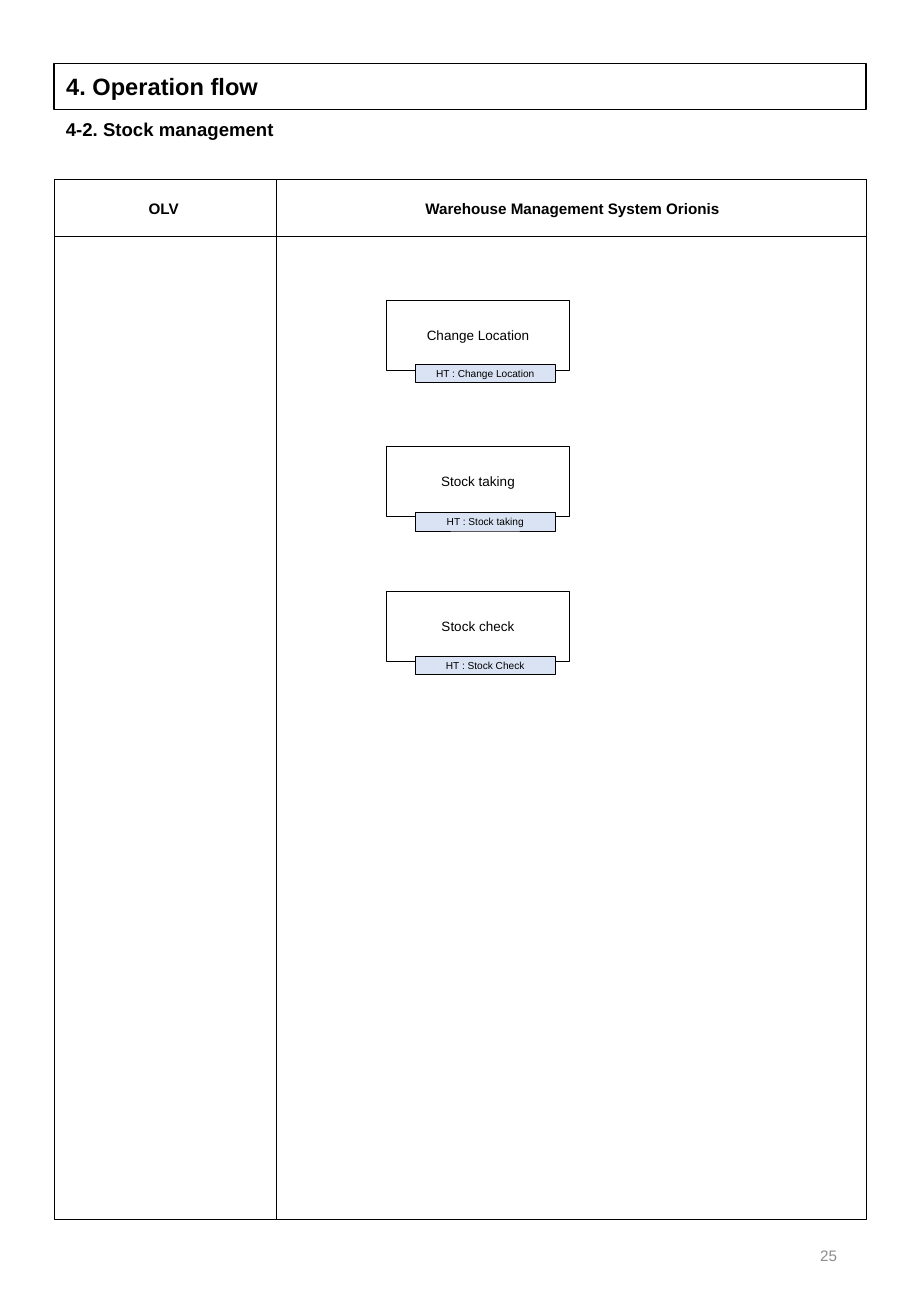
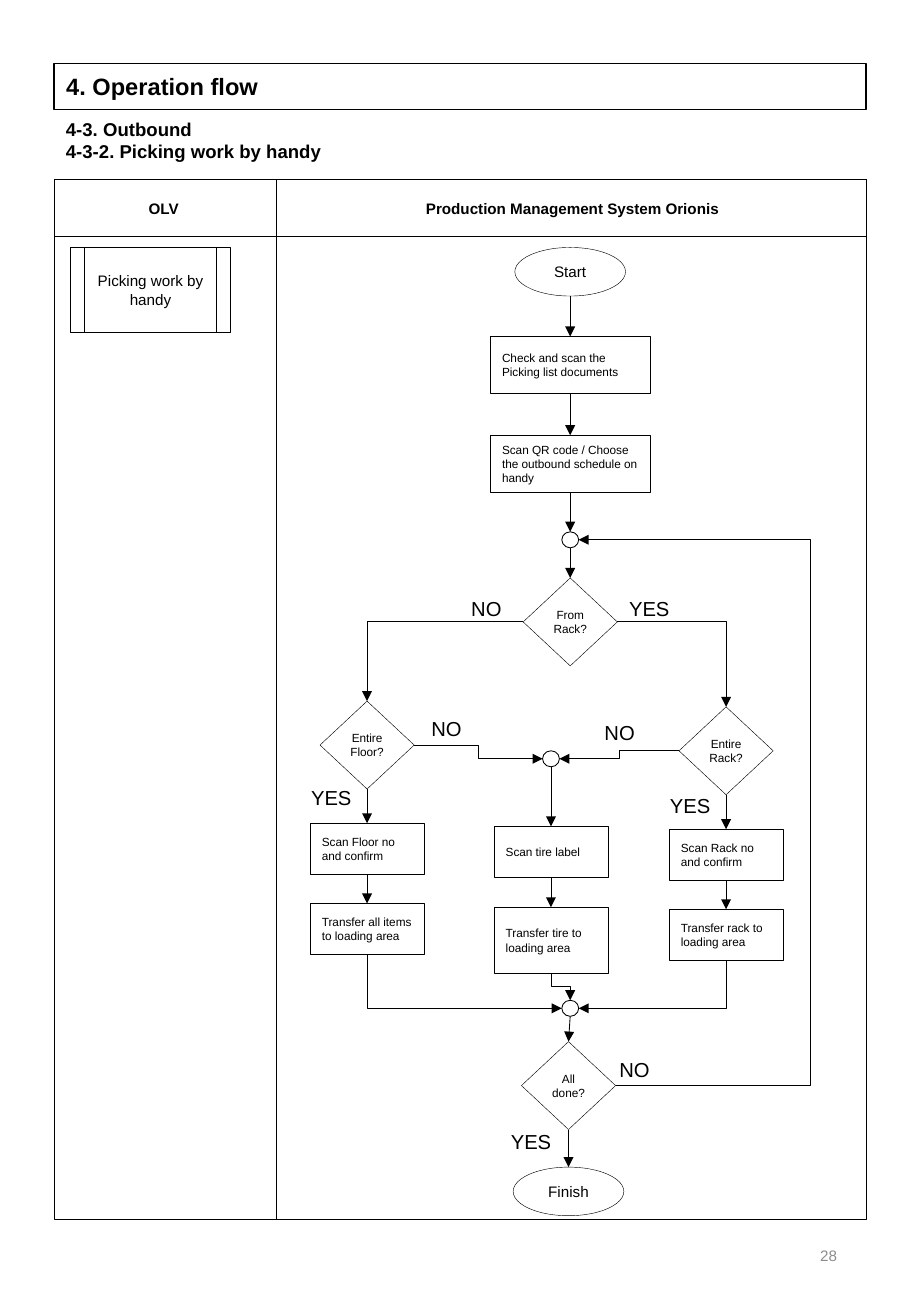
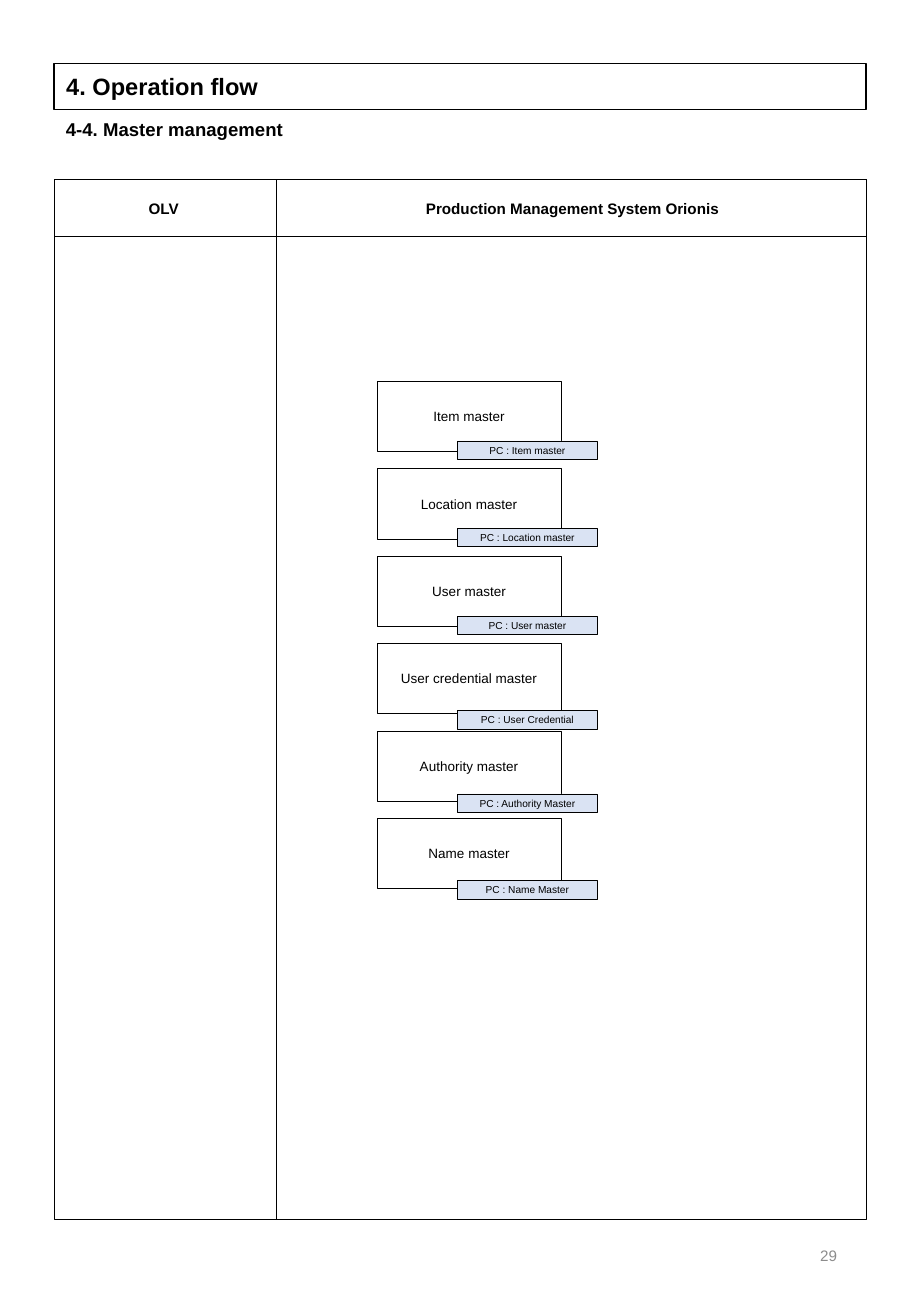
from dataclasses import dataclass

from lxml import etree
from pptx import Presentation
from pptx.dml.color import RGBColor
from pptx.enum import shapes as kinds, text as txt
from pptx.oxml import ns
from pptx.util import Pt


@dataclass(frozen=True)
class Theme:
    font: str = "Arial"
    ink: str = "000000"
    paper: str = "FFFFFF"
    tag: str = "DAE3F3"
    number: str = "8C8C8C"
    title: int = 14
    label: int = 12
    subtitle: int = 11
    body: int = 9
    card: int = 8
    step: int = 7
    small: int = 6
    hairline: float = 0.25
    thin: float = 0.5


THEME = Theme()
LEFT, CENTER, RIGHT = txt.PP_ALIGN.LEFT, txt.PP_ALIGN.CENTER, txt.PP_ALIGN.RIGHT
SHAPE = kinds.MSO_SHAPE

# Page frame, in points
PAGE_W, PAGE_H = 540, 780
FRAME_X, FRAME_Y, FRAME_W, FRAME_H = 32, 106.2, 481.5, 616.5
HEADER_H, DIVIDER_X = 34, 164
TITLE = "4. Operation flow"
OWNER = "OLV"

# Card slides: card text, tag text, drop from card top to tag top
STOCK_CARDS = [
    ("Change Location", "HT : Change Location", 37.8),
    ("Stock taking", "HT : Stock taking", 39.5),
    ("Stock check", "HT : Stock Check", 38.2),
]
MASTER_CARDS = [
    ("Item master", "PC : Item master", 35.3),
    ("Location master", "PC : Location master", 35.3),
    ("User master", "PC : User master", 35.6),
    ("User credential master", "PC : User Credential", 39.6),
    ("Authority master", "PC : Authority Master", 37.3),
    ("Name master", "PC : Name Master", 36.8),
]
CARD_SIZE, TAG_SIZE = (108.7, 41.6), (82.8, 11)

# Flowchart: preset, width, height, type size, alignment, line width
NODE_KINDS = {
    "terminal": (SHAPE.OVAL, 65.6, 28.8, THEME.body, CENTER, THEME.hairline),
    "task": (SHAPE.RECTANGLE, 95, 33.8, THEME.step, LEFT, THEME.hairline),
    "step": (SHAPE.RECTANGLE, 67.8, 30.4, THEME.step, LEFT, THEME.hairline),
    "tall step": (SHAPE.RECTANGLE, 67.8, 39, THEME.step, LEFT, THEME.hairline),
    "decision": (SHAPE.FLOWCHART_DECISION, 55.8, 52.1, THEME.step, CENTER, THEME.hairline),
    "junction": (SHAPE.OVAL, 10, 9.5, THEME.step, CENTER, THEME.thin),
}
MAIN, FLOOR, TIRE, RACK, RETURN = 338, 217.6, 326.6, 430.4, 480.3

# Node: kind, text, centre x, top
NODES = {
    "start": ("terminal", "Start", MAIN, 146.7),
    "check": ("task", "Check and scan the Picking list documents", MAIN, 199.4),
    "scan": ("task", "Scan QR code / Choose the outbound schedule on handy", MAIN, 258),
    "loop": ("junction", "", MAIN, 315.2),
    "from rack": ("decision", "From Rack?", MAIN, 342.6),
    "entire floor": ("decision", "Entire Floor?", FLOOR, 415.6),
    "entire rack": ("decision", "Entire Rack?", RACK, 419),
    "hub": ("junction", "", TIRE, 445),
    "scan floor": ("step", "Scan Floor no and confirm", FLOOR, 488),
    "scan tire": ("step", "Scan tire label", TIRE, 489.8),
    "scan rack": ("step", "Scan Rack no and confirm", RACK, 491.5),
    "move floor": ("step", "Transfer all items to loading area", FLOOR, 535.5),
    "move tire": ("tall step", "Transfer tire to loading area", TIRE, 537.8),
    "move rack": ("step", "Transfer rack to loading area", RACK, 539),
    "join": ("junction", "", MAIN, 592.9),
    "done": ("decision", "All done?", MAIN - 1, 617.4),
    "finish": ("terminal", "Finish", MAIN - 1, 691.8),
}
STRAIGHT = [
    ("start", "check"), ("check", "scan"), ("scan", "loop"), ("loop", "from rack"),
    ("entire floor", "scan floor"), ("scan floor", "move floor"),
    ("hub", "scan tire"), ("scan tire", "move tire"),
    ("entire rack", "scan rack"), ("scan rack", "move rack"),
    ("join", "done"), ("done", "finish"),
]
# Elbow: from node, side, to node, side, x of the middle leg when it is not halfway
TOP, WEST, BOTTOM, EAST = range(4)
ELBOWS = [
    ("from rack", WEST, "entire floor", TOP, None),
    ("from rack", EAST, "entire rack", TOP, None),
    ("entire floor", EAST, "hub", WEST, None),
    ("entire rack", WEST, "hub", EAST, None),
    ("move floor", BOTTOM, "join", WEST, None),
    ("move tire", BOTTOM, "join", TOP, None),
    ("move rack", BOTTOM, "join", EAST, None),
    ("done", EAST, "loop", EAST, RETURN),
]
ANSWERS = [
    ("NO", 272.2, 350), ("YES", 365.8, 350),
    ("NO", 248.6, 420.8), ("NO", 351.2, 423.5),
    ("YES", 177.3, 462.2), ("YES", 390, 466.4),
    ("NO", 360, 623.4), ("YES", 295.7, 665.8),
]
ANSWER_W = {"NO": 32.4, "YES": 38.9}


# Drawing helpers
def color(value):
    return RGBColor.from_string(value)


def write(box, lines, size, align=LEFT, bold=False, ink=THEME.ink,
          anchor=txt.MSO_ANCHOR.MIDDLE, wrap=True):
    frame = box.text_frame
    frame.text = "\n".join(lines)
    frame.word_wrap = wrap
    frame.auto_size = txt.MSO_AUTO_SIZE.NONE
    frame.vertical_anchor = anchor
    for para in frame.paragraphs:
        para.alignment = align
        font = para.font
        font.name, font.size, font.bold = THEME.font, Pt(size), bold
        font.color.rgb = color(ink)


def outline(shape, width):
    shape.line.color.rgb = color(THEME.ink)
    shape.line.width = Pt(width)


def add_box(page, preset, x, y, w, h, fill=None, width=THEME.hairline):
    box = page.shapes.add_shape(preset, Pt(x), Pt(y), Pt(w), Pt(h))
    box.shadow.inherit = False
    if fill:
        box.fill.solid()
        box.fill.fore_color.rgb = color(fill)
    else:
        box.fill.background()
    outline(box, width)
    return box


def add_text(page, lines, x, y, w, h, size, **style):
    write(page.shapes.add_textbox(Pt(x), Pt(y), Pt(w), Pt(h)), lines, size, **style)


def add_line(page, x1, y1, x2, y2, kind=kinds.MSO_CONNECTOR.STRAIGHT, arrow=False):
    line = page.shapes.add_connector(kind, Pt(x1), Pt(y1), Pt(x2), Pt(y2))
    outline(line, THEME.thin)
    if arrow:
        etree.SubElement(line.line._get_or_add_ln(), ns.qn("a:tailEnd"), type="triangle")
    etree.SubElement(line._element.spPr, ns.qn("a:effectLst"))
    return line


def add_elbow(page, start, side, end, end_side, middle_x):
    (x1, y1), (x2, y2) = side_point(start, side), side_point(end, end_side)
    elbow = kinds.MSO_CONNECTOR.ELBOW
    if side == BOTTOM:  # leaves downwards: the same bend, turned about its centre
        turn = 1 if x2 > x1 else -1
        cx, cy = (x1 + x2) / 2, (y1 + y2) / 2
        half_w, half_h = turn * (y2 - y1) / 2, abs(x2 - x1) / 2
        line = add_line(page, cx + half_w, cy - half_h, cx - half_w, cy + half_h, elbow, True)
        line._element.spPr.find(ns.qn("a:xfrm")).set("rot", str((180 + 90 * turn) * 60000))
    else:
        line = add_line(page, x1, y1, x2, y2, elbow, True)
    geometry = line._element.spPr.find(ns.qn("a:prstGeom"))
    if side % 2 != end_side % 2:
        geometry.set("prst", "bentConnector2")
    elif middle_x:
        guides = geometry.get_or_add_avLst()
        ratio = round((middle_x - x1) / (x2 - x1) * 100000)
        etree.SubElement(guides, ns.qn("a:gd"), name="adj1", fmla=f"val {ratio}")


def side_point(name, side):
    kind, _, cx, top = NODES[name]
    _, w, h, *_ = NODE_KINDS[kind]
    return [(cx, top), (cx - w / 2, top + h / 2), (cx, top + h), (cx + w / 2, top + h / 2)][side]


# Parts shared by every slide
def add_page(deck, number, subtitle, system):
    page = deck.slides.add_slide(deck.slide_layouts[5])
    title = page.shapes.title
    title.left, title.top, title.width, title.height = map(Pt, (FRAME_X, 37.6, FRAME_W, 27.3))
    outline(title, 1)
    write(title, [TITLE], THEME.title, bold=True)
    add_text(page, subtitle, FRAME_X, 66.2, FRAME_W, 34, THEME.subtitle, bold=True,
             anchor=txt.MSO_ANCHOR.TOP)
    for height in (FRAME_H, HEADER_H):
        add_box(page, SHAPE.RECTANGLE, FRAME_X, FRAME_Y, FRAME_W, height)
    add_line(page, DIVIDER_X, FRAME_Y, DIVIDER_X, FRAME_Y + FRAME_H)
    for heading, x, end in ((OWNER, FRAME_X - 1, DIVIDER_X - 1),
                            (system, DIVIDER_X + 1, FRAME_X + FRAME_W)):
        add_text(page, [heading], x, FRAME_Y + 0.5, end - x, HEADER_H, THEME.body,
                 align=CENTER, bold=True)
    add_text(page, [str(number)], 381.6, 722.9, 121.7, 41.8, THEME.body,
             align=RIGHT, ink=THEME.number)
    return page


def add_cards(page, cards, x, top, pitch, tag_x):
    for row, (name, tag, drop) in enumerate(cards):
        y = top + row * pitch
        card = add_box(page, SHAPE.RECTANGLE, x, y, *CARD_SIZE)
        write(card, [name], THEME.card, CENTER)
        label = add_box(page, SHAPE.RECTANGLE, tag_x, y + drop, *TAG_SIZE, fill=THEME.tag)
        write(label, [tag], THEME.small, CENTER)


def add_picking_flow(page):
    # Process box with double sides
    x, y, w, h, inset = 41.8, 146.7, 94.8, 50.2, 8.2
    process = add_box(page, SHAPE.RECTANGLE, x, y, w, h, width=THEME.thin)
    write(process, ["Picking work by handy"], THEME.body, CENTER)
    for bar_x in (x + inset, x + w - inset):
        add_line(page, bar_x, y, bar_x, y + h)

    # Nodes
    boxes = {}
    for name, (kind, label, cx, top) in NODES.items():
        preset, w, h, size, align, width = NODE_KINDS[kind]
        box = add_box(page, preset, cx - w / 2, top, w, h, THEME.paper, width)
        if label:
            write(box, [label], size, align)
        if kind == "decision":
            box.text_frame.margin_left = box.text_frame.margin_right = 0
        boxes[name] = box

    # Arrows; an oval numbers its sides differently, so only its top is joined
    for start, end in STRAIGHT:
        line = add_line(page, *side_point(start, BOTTOM), *side_point(end, TOP), arrow=True)
        if NODES[start][0] not in ("terminal", "junction"):
            line.begin_connect(boxes[start], BOTTOM)
        line.end_connect(boxes[end], TOP)
    for elbow in ELBOWS:
        add_elbow(page, *elbow)

    # Answers beside the decisions
    for answer, x, y in ANSWERS:
        add_text(page, [answer], x, y, ANSWER_W[answer], 21.6, THEME.label,
                 anchor=txt.MSO_ANCHOR.TOP, wrap=False)


def main():
    deck = Presentation()
    deck.slide_width, deck.slide_height = Pt(PAGE_W), Pt(PAGE_H)

    page = add_page(deck, 25, ["4-2. Stock management"], "Warehouse Management System Orionis")
    add_cards(page, STOCK_CARDS, 229, 178, 86.3, 246.2)

    system = "Production Management System Orionis"
    page = add_page(deck, 28, ["4-3. Outbound", "4-3-2. Picking work by handy"], system)
    add_picking_flow(page)

    page = add_page(deck, 29, ["4-4. Master management"], system)
    add_cards(page, MASTER_CARDS, 223.7, 226, 51.8, 271.2)

    deck.save("out.pptx")


if __name__ == "__main__":
    main()
